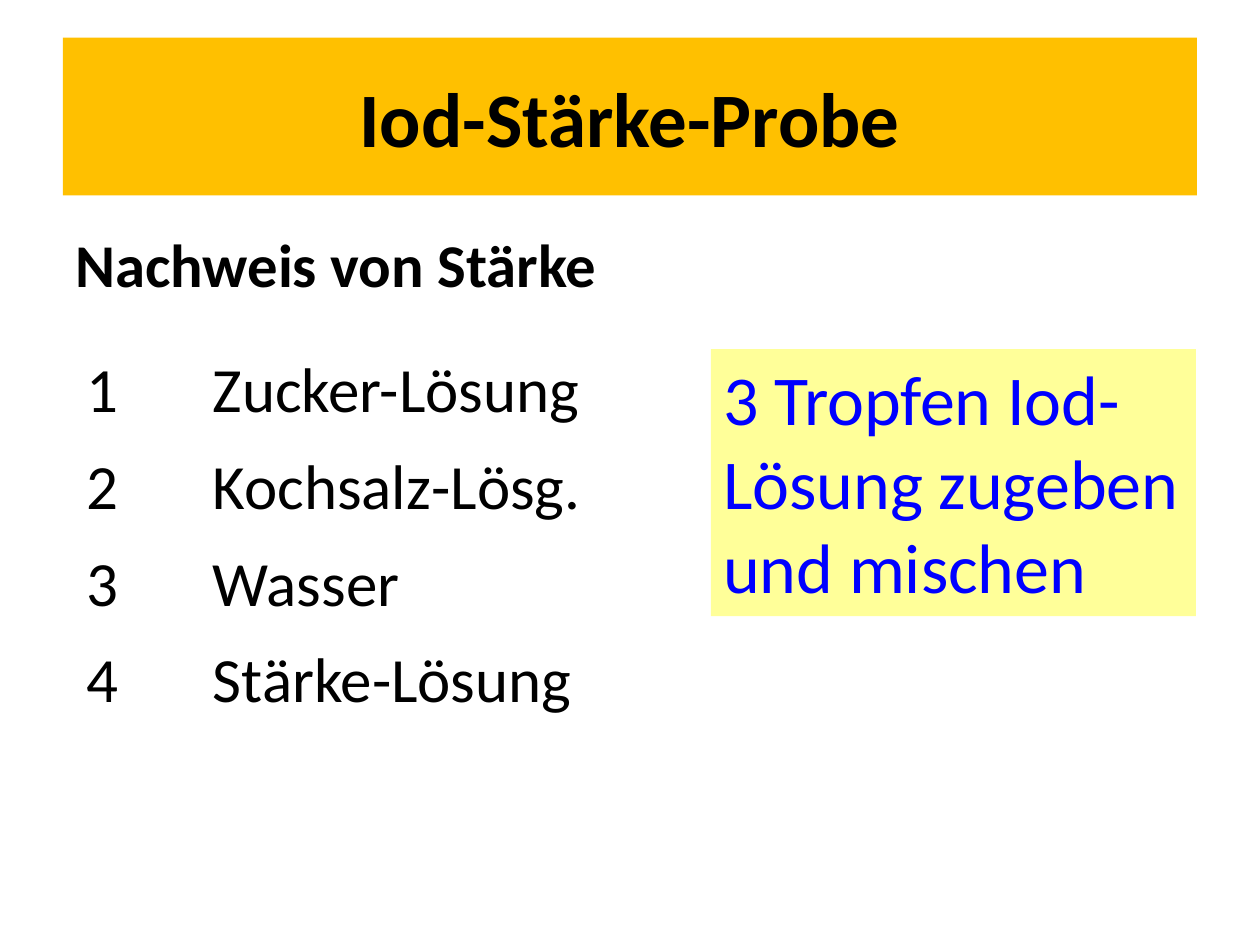
"""Build the slide on the iodine test for starch."""
from pptx import Presentation
from pptx import util as u
from pptx.dml.color import RGBColor
from pptx.enum import shapes, text

BLACK = RGBColor(0x00, 0x00, 0x00)
BLUE = RGBColor(0x00, 0x00, 0xFF)
ORANGE = RGBColor(0xFF, 0xC0, 0x00)
YELLOW = RGBColor(0xFF, 0xFF, 0x99)
SOLUTIONS = ["Zucker-Lösung", "Kochsalz-Lösg.", "Wasser", "Stärke-Lösung"]
NUMBER_WIDTH = u.Cm(2.54)


def add_box(s, left, top, width, height, fill=None):
    box = [u.Cm(v) for v in (left, top, width, height)]
    if fill is None:
        sp = s.shapes.add_textbox(*box)
    else:
        sp = s.shapes.add_shape(shapes.MSO_SHAPE.RECTANGLE, *box)
        sp.shadow.inherit = False
        sp.fill.solid()
        sp.fill.fore_color.rgb = fill
        sp.line.fill.background()
    tf = sp.text_frame
    tf.word_wrap = True
    tf.vertical_anchor = text.MSO_ANCHOR.TOP
    tf.paragraphs[0].alignment = text.PP_ALIGN.LEFT
    return tf


def add_run(p, words, size, color=BLACK, bold=False):
    r = p.add_run()
    r.text = words
    r.font.name = "Calibri"
    r.font.size = u.Pt(size)
    r.font.bold = bold
    r.font.color.rgb = color


prs = Presentation()
prs.slide_width, prs.slide_height = u.Cm(25.4), u.Cm(19.05)
s = prs.slides.add_slide(prs.slide_layouts[6])

tf = add_box(s, 1.27, 0.76, 22.86, 3.18, ORANGE)
tf.vertical_anchor = text.MSO_ANCHOR.MIDDLE
p = tf.paragraphs[0]
p.alignment = text.PP_ALIGN.CENTER
add_run(p, "Iod-Stärke-Probe", 44, bold=True)

tf = add_box(s, 1.27, 4.45, 22.86, 2.49)
add_run(tf.paragraphs[0], "Nachweis von Stärke", 34.7, bold=True)

tf = add_box(s, 1.5, 6.93, 23.19, 11.28)
for number, solution in enumerate(SOLUTIONS, 1):
    p = tf.paragraphs[0] if number == 1 else tf.add_paragraph()
    p.space_after = u.Pt(12)
    pPr = p._p.get_or_add_pPr()
    pPr.set("marL", str(NUMBER_WIDTH))
    pPr.set("indent", str(-NUMBER_WIDTH))
    add_run(p, f"{number}\t{solution}", 36)

tf = add_box(s, 14.33, 7.04, 9.78, 5.38, YELLOW)
add_run(tf.paragraphs[0], "3 Tropfen Iod-Lösung zugeben und mischen", 40, BLUE)

prs.save("out.pptx")
